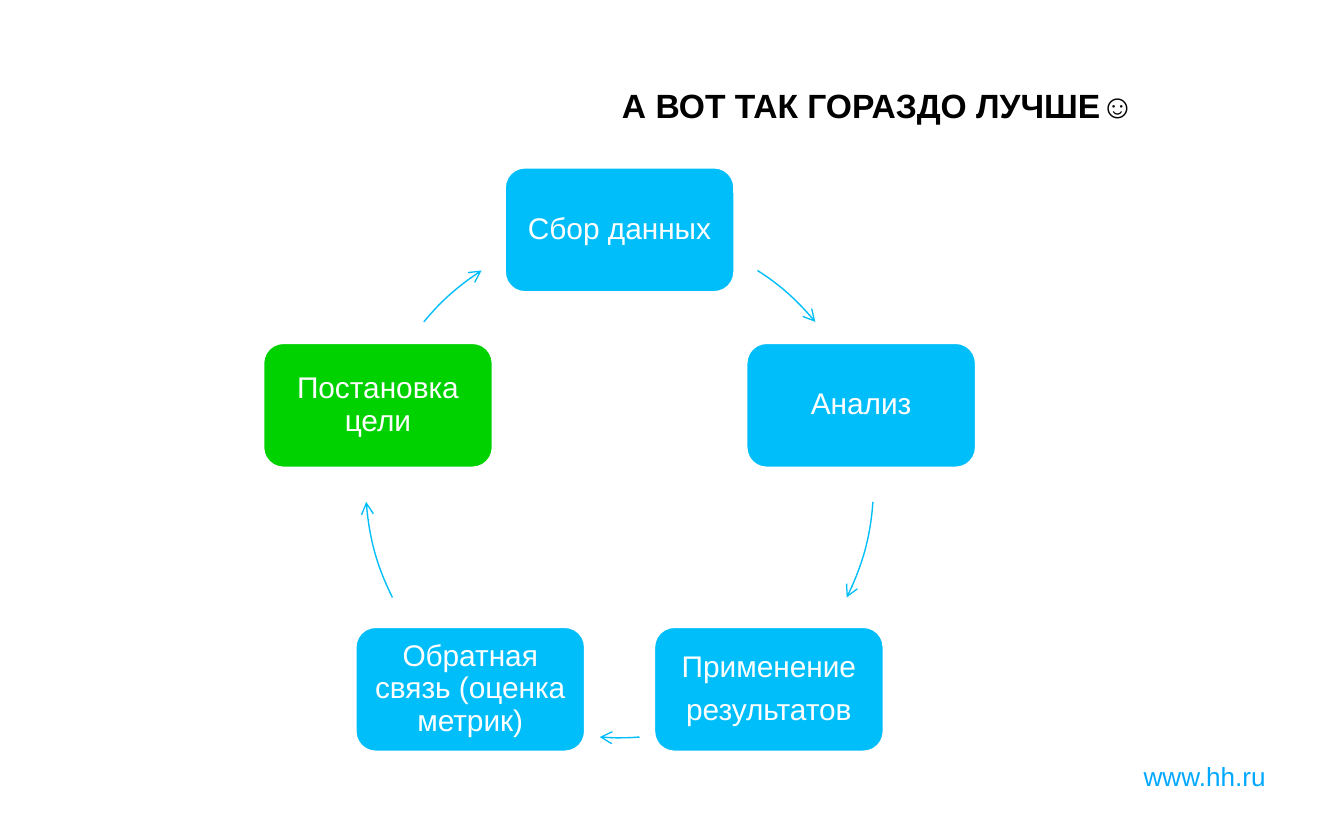
from math import cos, radians, sin

from lxml import etree
from pptx import Presentation
from pptx.dml.color import RGBColor
from pptx.enum.shapes import MSO_SHAPE
from pptx.enum.text import MSO_ANCHOR, PP_ALIGN
from pptx.oxml.ns import qn
from pptx.util import Inches, Pt

ROUNDED, ARC = MSO_SHAPE.ROUNDED_RECTANGLE, MSO_SHAPE.ARC
MIDDLE, TOP = MSO_ANCHOR.MIDDLE, MSO_ANCHOR.TOP
CENTER = PP_ALIGN.CENTER

THEME = {
    "font": "Arial",
    "step": RGBColor(0x00, 0xBE, 0xFA),
    "goal": RGBColor(0x00, 0xD2, 0x00),
    "site": RGBColor(0x00, 0xA8, 0xFF),
    "white": RGBColor(0xFF, 0xFF, 0xFF),
    "black": RGBColor(0x00, 0x00, 0x00),
    "title_size": 18,
    "step_size": 16,
    "site_size": 14,
}

TITLE = "А ВОТ ТАК ГОРАЗДО ЛУЧШЕ☺"
SITE = "www.hh.ru"
STEPS = [
    {"lines": ["Сбор данных"], "fill": "step", "arrow": (302.9, 320.4)},
    {"lines": ["Анализ"], "fill": "step", "arrow": (4.1, 26.6)},
    {"lines": ["Применение", "результатов"], "fill": "step", "arrow": (85.5, 94.5)},
    {"lines": ["Обратная связь (оценка метрик)"], "fill": "step", "arrow": (153.4, 175.9)},
    {"lines": ["Постановка цели"], "fill": "goal", "arrow": (219.6, 237.1)},
]

CENTER_X, CENTER_Y, RADIUS = 4.61, 3.6, 1.89
STEP_W, STEP_H, STEP_INSET = 1.72, 0.94, 0.06
ARC_UNITS_PER_DEGREE = 0.6


def style(paragraph, size, color, bold=False):
    """Apply the theme font to a paragraph."""
    font = paragraph.font
    font.name, font.size, font.bold = THEME["font"], Pt(THEME[size]), bold
    font.color.rgb = THEME[color]


def add_label(slide, box, text, size, color, anchor, wrap, bold=False):
    """Add a single-line text box."""
    frame = slide.shapes.add_textbox(*map(Inches, box)).text_frame
    frame.word_wrap, frame.vertical_anchor = wrap, anchor
    frame.text = text
    style(frame.paragraphs[0], size, color, bold)


def add_step(slide, index, step):
    """Place one step of the cycle on the circle."""
    angle = radians(360 / len(STEPS) * index - 90)
    left = CENTER_X + RADIUS * cos(angle) - STEP_W / 2
    top = CENTER_Y + RADIUS * sin(angle) - STEP_H / 2
    card = slide.shapes.add_shape(ROUNDED, *map(Inches, (left, top, STEP_W, STEP_H)))
    card.shadow.inherit = False
    card.fill.solid()
    card.fill.fore_color.rgb = THEME[step["fill"]]
    card.line.color.rgb = THEME["white"]
    card.line.width = Pt(2)

    frame = card.text_frame
    frame.word_wrap, frame.vertical_anchor = True, MIDDLE
    frame.margin_left = frame.margin_right = Inches(STEP_INSET)
    frame.margin_top = frame.margin_bottom = Inches(STEP_INSET)
    frame.text = "\n".join(step["lines"])
    for paragraph in frame.paragraphs:
        paragraph.alignment = CENTER
        paragraph.line_spacing = 0.9
        paragraph.space_after = Pt(0.35 * THEME["step_size"])
        style(paragraph, "step_size", "white")


def add_arrow(slide, angles):
    """Draw the part of the circle that leads to the next step."""
    circle = (CENTER_X - RADIUS, CENTER_Y - RADIUS, 2 * RADIUS, 2 * RADIUS)
    arrow = slide.shapes.add_shape(ARC, *map(Inches, circle))
    for position, degrees in enumerate(angles):
        arrow.adjustments[position] = degrees * ARC_UNITS_PER_DEGREE
    arrow.shadow.inherit = False
    arrow.fill.background()
    arrow.line.color.rgb = THEME["step"]
    arrow.line.width = Pt(0.75)
    line = arrow.line.fill._xPr
    etree.SubElement(line, qn("a:tailEnd"), type="arrow")


def main():
    """Build the feedback cycle slide."""
    deck = Presentation()
    deck.slide_width, deck.slide_height = Inches(10), Inches(6.25)
    slide = deck.slides.add_slide(deck.slide_layouts[6])
    add_label(slide, (8.41, 5.61, 1.12, 0.34), SITE, "site_size", "site", TOP, False)
    add_label(slide, (4.53, 0.25, 5, 1.06), TITLE, "title_size", "black", MIDDLE, True, True)
    for index, step in enumerate(STEPS):
        add_step(slide, index, step)
        add_arrow(slide, step["arrow"])
    deck.save("out.pptx")


if __name__ == "__main__":
    main()
